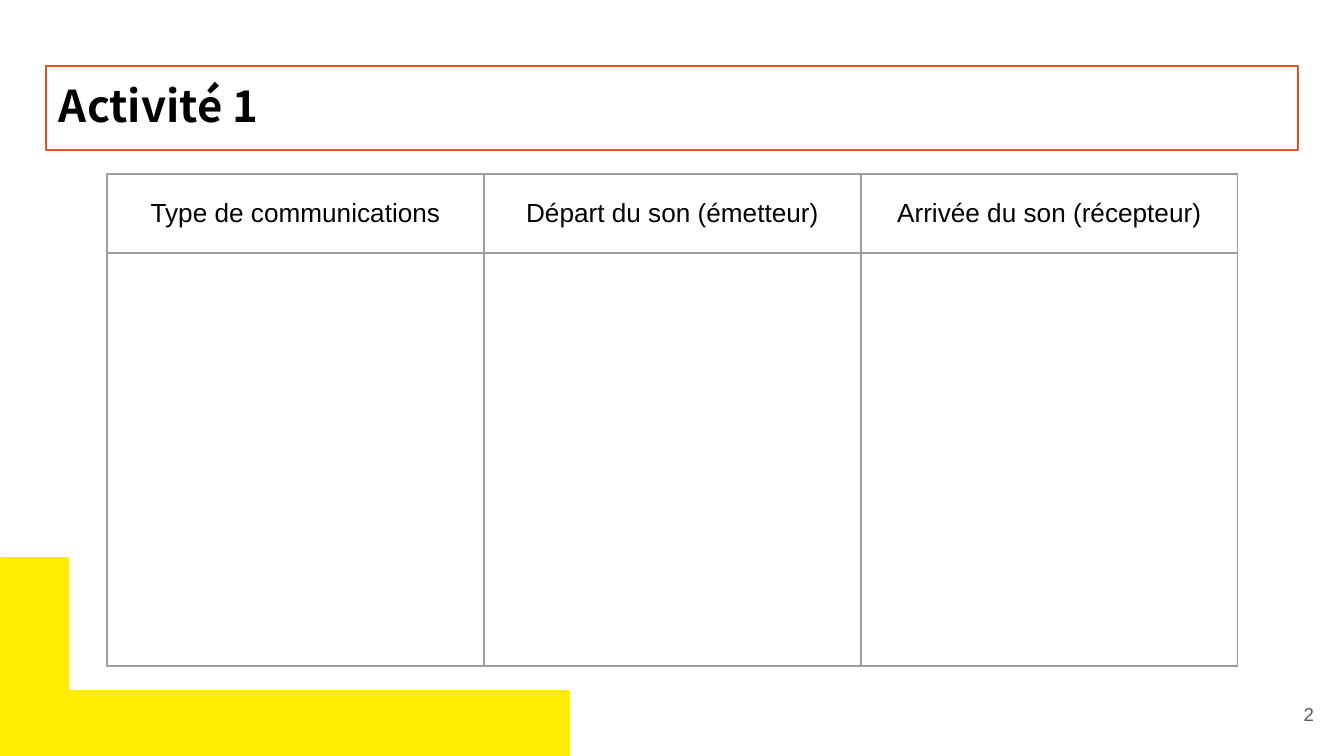
"""Build the "Activité 1" slide: a title, an empty three-column table and a yellow corner."""
from lxml.etree import SubElement
from pptx import Presentation
from pptx.dml.color import RGBColor
from pptx.enum.shapes import MSO_SHAPE
from pptx.enum.text import MSO_ANCHOR as Anchor, MSO_AUTO_SIZE as AutoSize, PP_ALIGN as Align
from pptx.oxml.ns import qn
from pptx.util import Emu, Pt

EMU_PER_PX = 914400 / 134.4
COLORS = {"yellow": "FFED00", "orange": "E94E1B", "black": "000000",
          "grid": "9E9E9E", "number": "595959"}
HEADERS = ["Type de communications", "Départ du son (émetteur)", "Arrivée du son (récepteur)"]


def px(*lengths):
    return [Emu(round(length * EMU_PER_PX)) for length in lengths]


def write(frame, text, size, color="black", font="Arial", bold=False, align=Align.LEFT, spacing=1.0):
    frame.word_wrap = True
    paragraph = frame.paragraphs[0]
    paragraph.alignment = align
    paragraph.line_spacing = spacing
    run = paragraph.add_run()
    run.text = text
    run.font.size = Pt(size)
    run.font.name = font
    run.font.bold = bold
    run.font.color.rgb = RGBColor.from_string(COLORS[color])
    SubElement(run.font._element, qn("a:ea")).set("typeface", font)


presentation = Presentation()
presentation.slide_width, presentation.slide_height = px(1344, 756)
slide = presentation.slides.add_slide(presentation.slide_layouts[5])

for left, top, rotation in [(0, 691, 0), (-250, 809, 90)]:
    bar = slide.shapes.add_shape(MSO_SHAPE.RECTANGLE, *px(left, top, 569, 67))
    bar.rotation = rotation
    bar.shadow.inherit = False
    bar.fill.solid()
    bar.fill.fore_color.rgb = RGBColor.from_string(COLORS["yellow"])
    bar.line.color.rgb = RGBColor.from_string(COLORS["yellow"])
    bar.line.width = Pt(0.75)

title = slide.shapes.title
title.left, title.top, title.width, title.height = px(46, 66, 1252, 84)
title.line.color.rgb = RGBColor.from_string(COLORS["orange"])
title.line.width = Pt(0.75)
title_frame = title.text_frame
title_frame.auto_size = AutoSize.NONE
title_frame.vertical_anchor = Anchor.MIDDLE
(title_frame.margin_left, title_frame.margin_top,
 title_frame.margin_right, title_frame.margin_bottom) = px(13, 13, 13, 13)
write(title_frame, "Activité 1", 23.4, font="Noto Sans CJK JP", bold=True, spacing=0.9)

table = slide.shapes.add_table(2, 3, *px(107, 174, 1131, 492)).table
table.first_row = table.horz_banding = False
for column in table.columns:
    column.width = px(377)[0]
table.rows[0].height, table.rows[1].height = px(79, 413)
for cell in table.iter_cells():
    cell.vertical_anchor = Anchor.MIDDLE
    cell.margin_left, cell.margin_top, cell.margin_right, cell.margin_bottom = px(13, 13, 13, 13)
    properties = cell._tc.get_or_add_tcPr()
    for side in ("lnL", "lnR", "lnT", "lnB"):
        border = SubElement(properties, qn(f"a:{side}"), w=str(Pt(0.75)))
        fill = SubElement(border, qn("a:solidFill"))
        SubElement(fill, qn("a:srgbClr"), val=COLORS["grid"])
    cell.fill.background()
for index, header in enumerate(HEADERS):
    write(table.cell(0, index).text_frame, header, 14, align=Align.CENTER)

number = slide.shapes.add_textbox(*px(1246, 685, 81, 58))
number_frame = number.text_frame
number_frame.vertical_anchor = Anchor.MIDDLE
number_frame.margin_left, number_frame.margin_right = px(13, 13)
write(number_frame, "2", 10, color="number", align=Align.RIGHT)

presentation.save("out.pptx")
